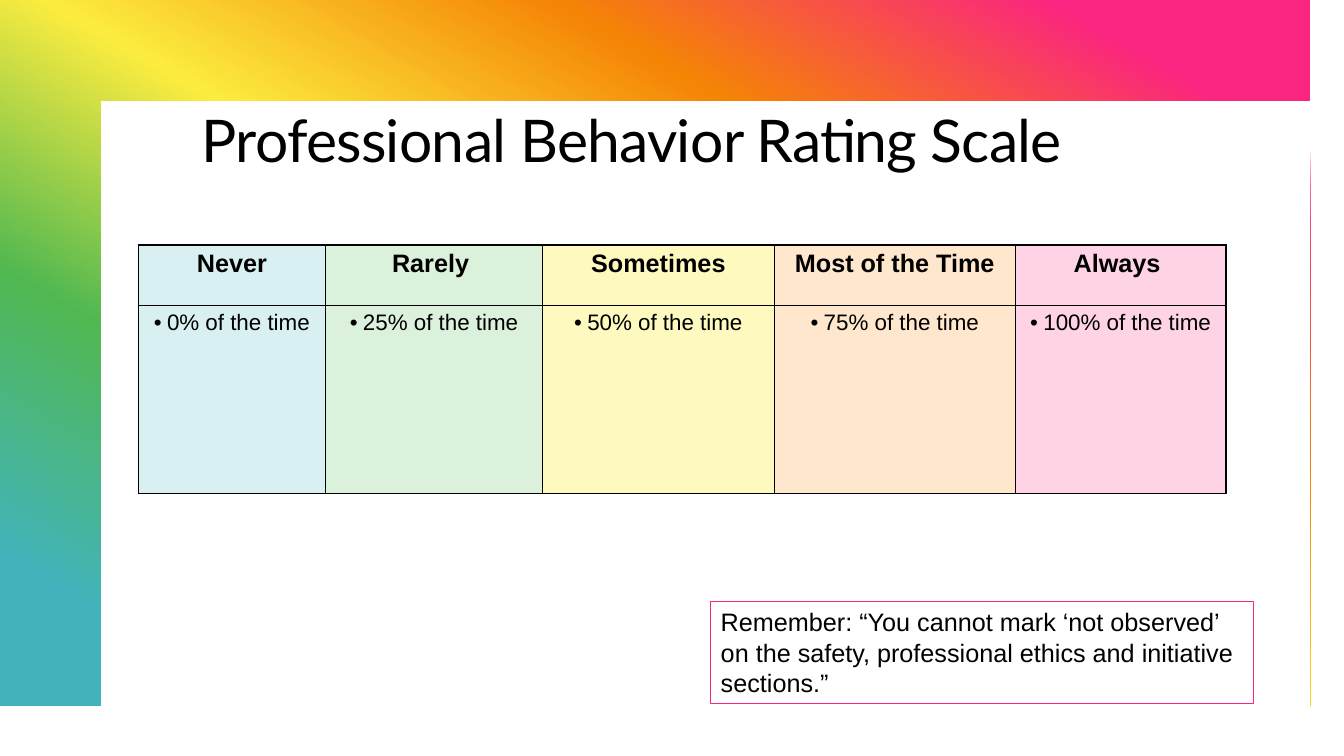
from lxml.etree import SubElement
from pptx import Presentation
from pptx.dml.color import RGBColor
from pptx.enum.shapes import MSO_SHAPE as Shape
from pptx.enum.text import MSO_ANCHOR as Anchor, MSO_AUTO_SIZE as AutoSize, PP_ALIGN as Align
from pptx.oxml import parse_xml
from pptx.oxml.ns import nsdecls, qn
from pptx.util import Inches, Pt

COLORS = {
    "black": "000000", "pink": "FA2481", "orange": "F58505",
    "yellow": "FCEC3F", "green": "51B851", "teal": "42B3BD",
    "pale teal": "D9F0F2", "pale green": "DCF1DC", "pale yellow": "FEF9BF",
    "pale orange": "FEE7CC", "pale pink": "FED3E6",
}
RAINBOW = ["pink", "orange", "yellow", "green", "teal"]
RATINGS = [
    ("Never", "0% of the time", "pale teal", 1.86),
    ("Rarely ", "25% of the time", "pale green", 2.15),
    ("Sometimes", "50% of the time", "pale yellow", 2.3),
    ("Most of the Time", "75% of the time", "pale orange", 2.39),
    ("Always ", "100% of the time", "pale pink", 2.09),
]
ROW_HEIGHTS = [0.6, 1.87]
REMINDER = ("Remember: “You cannot mark ‘not observed’ on the safety, "
            "professional ethics and initiative sections.”")


def color(name):
    """Return the named colour."""
    return RGBColor.from_string(COLORS[name])


def add_span(para, text, size, font="Arial", bold=False):
    """Add one black run to a paragraph."""
    span = para.add_run()
    span.text = text
    span.font.name = font
    span.font.size = Pt(size)
    span.font.bold = bold
    span.font.color.rgb = color("black")
    return span


def add_rainbow_frame(page):
    """Draw the open-bottomed gradient frame behind everything else."""
    width, bottom, inner_left, inner_right, inner_top = 13.33, 6.68, 0.84, 12.51, 0.84
    outline = [(width, 0), (width, bottom), (inner_right, bottom),
               (inner_right, inner_top), (inner_left, inner_top),
               (inner_left, bottom), (0, bottom)]
    builder = page.shapes.build_freeform(0, 0, scale=Inches(1))
    builder.add_line_segments(outline, close=True)
    frame = builder.convert_to_shape()
    frame.shadow.inherit = False
    frame.line.fill.background()
    stops = "".join(
        f'<a:gs pos="{10000 + 20000 * index}"><a:srgbClr val="{COLORS[name]}"/></a:gs>'
        for index, name in enumerate(RAINBOW))
    gradient = parse_xml(
        f'<a:gradFill {nsdecls("a")} rotWithShape="1"><a:gsLst>{stops}</a:gsLst>'
        '<a:lin ang="7200000" scaled="0"/></a:gradFill>')
    frame.element.spPr.find(qn("a:custGeom")).addnext(gradient)
    page.shapes.title.element.addprevious(frame.element)


def set_title(page, text):
    """Place and format the title placeholder."""
    title = page.shapes.title
    title.left, title.top = Inches(1.9), Inches(1.03)
    title.width, title.height = Inches(10), Inches(0.96)
    box = title.text_frame
    box.auto_size = AutoSize.NONE
    box.vertical_anchor = Anchor.TOP
    para = box.paragraphs[0]
    para.alignment = Align.LEFT
    para.line_spacing = 0.95
    span = add_span(para, text, 42, "Lato")
    span.font._element.set("spc", "-50")


def add_bullet(para):
    """Give a paragraph a hanging bullet."""
    properties = para._p.get_or_add_pPr()
    properties.set("marL", str(Inches(0.13)))
    properties.set("indent", str(Inches(-0.13)))
    SubElement(properties, qn("a:buFont")).set("typeface", "Arial")
    SubElement(properties, qn("a:buChar")).set("char", "•")


def add_borders(cell):
    """Draw a thin black line on every side of a cell."""
    properties = cell._tc.get_or_add_tcPr()
    for index, side in enumerate(["lnL", "lnR", "lnT", "lnB"]):
        properties.insert(index, parse_xml(
            f'<a:{side} {nsdecls("a")} w="{Pt(1)}"><a:solidFill>'
            f'<a:srgbClr val="{COLORS["black"]}"/></a:solidFill></a:{side}>'))


def fill_cell(cell, text, tint, is_header):
    """Write and colour one cell of the rating table."""
    cell.fill.solid()
    cell.fill.fore_color.rgb = color(tint)
    add_borders(cell)
    para = cell.text_frame.paragraphs[0]
    para.alignment = Align.CENTER
    if not is_header:
        add_bullet(para)
    add_span(para, text, 18 if is_header else 16, bold=is_header)


def add_rating_table(page):
    """Add the table of ratings and their frequencies."""
    table = page.shapes.add_table(
        len(ROW_HEIGHTS), len(RATINGS), Inches(1.37), Inches(2.43),
        Inches(10.79), Inches(sum(ROW_HEIGHTS))).table
    for row, height in zip(table.rows, ROW_HEIGHTS):
        row.height = Inches(height)
    for column, (rating, frequency, tint, width) in enumerate(RATINGS):
        table.columns[column].width = Inches(width)
        fill_cell(table.cell(0, column), rating, tint, True)
        fill_cell(table.cell(1, column), frequency, tint, False)


def add_reminder(page, text):
    """Add the outlined reminder box."""
    reminder = page.shapes.add_shape(
        Shape.RECTANGLE, Inches(7.05), Inches(5.97), Inches(5.38), Inches(1.01))
    reminder.shadow.inherit = False
    reminder.fill.background()
    reminder.line.color.rgb = color("pink")
    reminder.line.width = Pt(0.75)
    box = reminder.text_frame
    box.word_wrap = True
    box.auto_size = AutoSize.SHAPE_TO_FIT_TEXT
    box.vertical_anchor = Anchor.TOP
    para = box.paragraphs[0]
    para.alignment = Align.LEFT
    add_span(para, text, 18)


def main():
    """Build and save the slide."""
    deck = Presentation()
    deck.slide_width, deck.slide_height = Inches(13.33), Inches(7.5)
    page = deck.slides.add_slide(deck.slide_layouts[5])
    add_rainbow_frame(page)
    set_title(page, "Professional Behavior Rating Scale")
    add_rating_table(page)
    add_reminder(page, REMINDER)
    deck.save("out.pptx")


if __name__ == "__main__":
    main()
